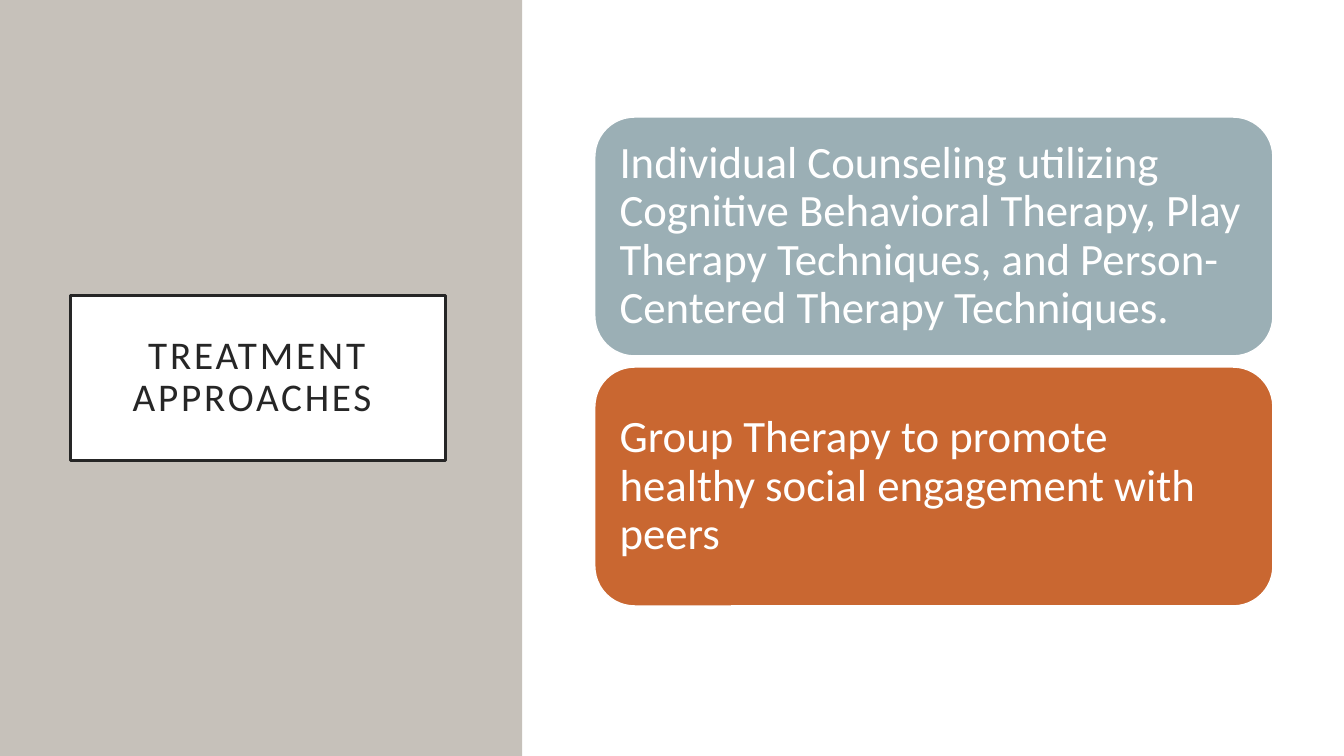
from dataclasses import dataclass

from pptx import Presentation
from pptx.dml.color import RGBColor
from pptx.enum.shapes import MSO_SHAPE
from pptx.enum.text import MSO_ANCHOR, MSO_AUTO_SIZE, PP_ALIGN
from pptx.util import Cm, Pt

COLOURS = {
    "white": "FFFFFF",
    "stone": "C6C1BA",
    "ink": "262626",
    "slate": "9BAFB5",
    "rust": "C96731",
}
FONT = "Calibri"
PAGE_WIDTH, PAGE_HEIGHT = 33.87, 19.05
CARD_LEFT, CARD_TOP, CARD_WIDTH, CARD_HEIGHT, CARD_GAP = 14.99, 2.95, 17.09, 6.02, 0.28


@dataclass
class Box:
    left: float
    top: float
    width: float
    height: float


@dataclass
class Approach:
    text: str
    colour: str


APPROACHES = [
    Approach("Individual Counseling utilizing Cognitive Behavioral Therapy, Play Therapy "
             "Techniques, and Person-Centered Therapy Techniques.", "slate"),
    Approach("Group Therapy to promote healthy social engagement with peers", "rust"),
]


def colour(name: str) -> RGBColor:
    return RGBColor.from_string(COLOURS[name])


def paint(shape, fill: str, line: str = "", line_width: float = 1) -> None:
    shape.fill.solid()
    shape.fill.fore_color.rgb = colour(fill)
    if line:
        shape.line.color.rgb = colour(line)
        shape.line.width = Pt(line_width)
    else:
        shape.line.fill.background()


def add_block(page, kind: MSO_SHAPE, box: Box, fill: str, line: str = ""):
    shape = page.shapes.add_shape(
        kind, Cm(box.left), Cm(box.top), Cm(box.width), Cm(box.height))
    shape.shadow.inherit = False
    paint(shape, fill, line)
    return shape


def write(shape, text: str, *, size: float, ink: str, margin: float,
          align: PP_ALIGN = PP_ALIGN.LEFT, tracking: int = 0) -> None:
    frame = shape.text_frame
    frame.word_wrap = True
    frame.auto_size = MSO_AUTO_SIZE.NONE
    frame.vertical_anchor = MSO_ANCHOR.MIDDLE
    frame.margin_left = frame.margin_right = Cm(margin)
    frame.margin_top = frame.margin_bottom = Cm(margin)
    para = frame.paragraphs[0]
    para.alignment = align
    para.line_spacing = 0.9
    span = para.add_run()
    span.text = text
    span.font.name = FONT
    span.font.size = Pt(size)
    span.font.color.rgb = colour(ink)
    if tracking:
        span.font._element.set("spc", str(tracking))


def place_title(page, text: str, box: Box) -> None:
    title = page.shapes.title
    title.left, title.top = Cm(box.left), Cm(box.top)
    title.width, title.height = Cm(box.width), Cm(box.height)
    paint(title, "white", "ink", 2.5)
    write(title, text, size=28, ink="ink", margin=0.51,
          align=PP_ALIGN.CENTER, tracking=200)
    # Bring the title in front of the side panel
    title.element.getparent().append(title.element)


def main() -> None:
    deck = Presentation()
    deck.slide_width, deck.slide_height = Cm(PAGE_WIDTH), Cm(PAGE_HEIGHT)
    page = deck.slides.add_slide(deck.slide_layouts[5])

    # Side panel with the framed title
    add_block(page, MSO_SHAPE.RECTANGLE, Box(0, 0, 13.16, PAGE_HEIGHT), "stone")
    place_title(page, "TREATMENT APPROACHES ", Box(1.78, 7.44, 9.45, 4.17))

    # Content panel
    add_block(page, MSO_SHAPE.RECTANGLE, Box(13.2, 0, PAGE_WIDTH - 13.2, PAGE_HEIGHT), "white")

    # One card per approach
    for index, approach in enumerate(APPROACHES):
        top = CARD_TOP + index * (CARD_HEIGHT + CARD_GAP)
        card = add_block(page, MSO_SHAPE.ROUNDED_RECTANGLE,
                         Box(CARD_LEFT, top, CARD_WIDTH, CARD_HEIGHT),
                         approach.colour, "white")
        write(card, approach.text, size=32, ink="white", margin=0.33)

    deck.save("out.pptx")


if __name__ == "__main__":
    main()
